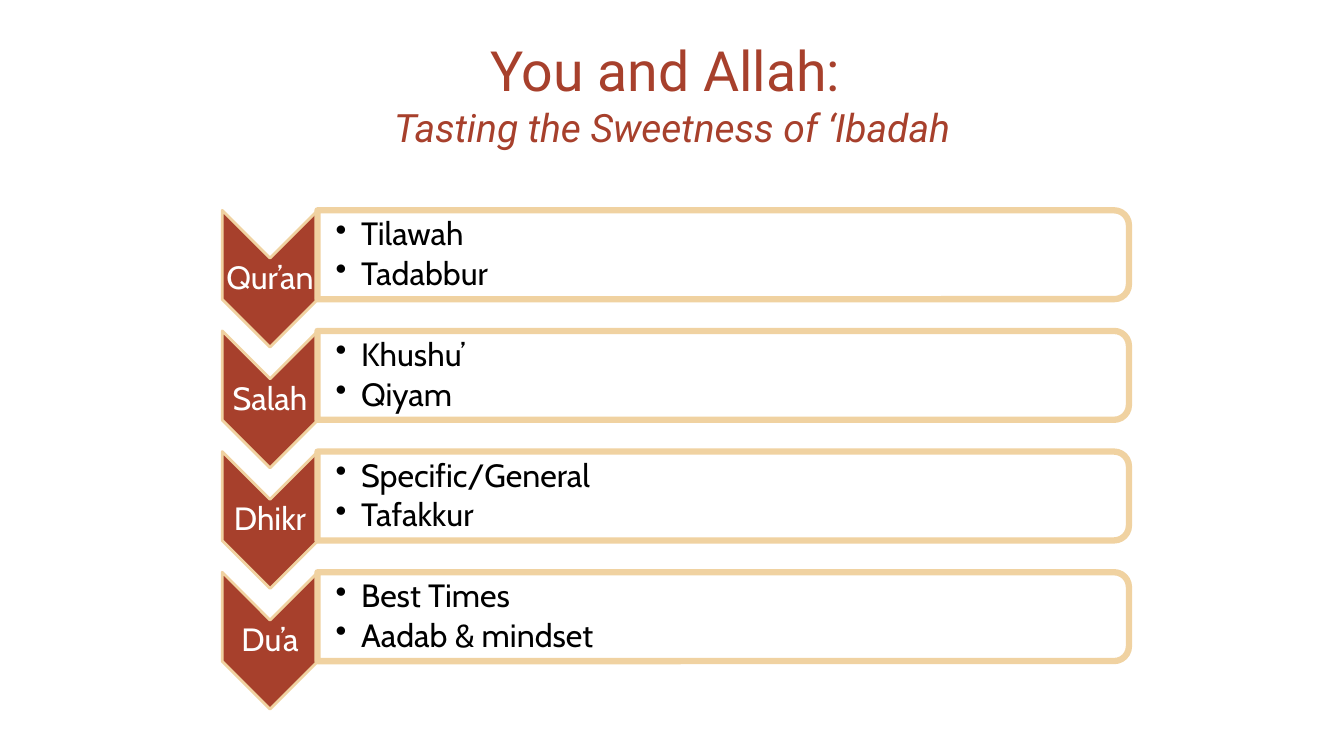
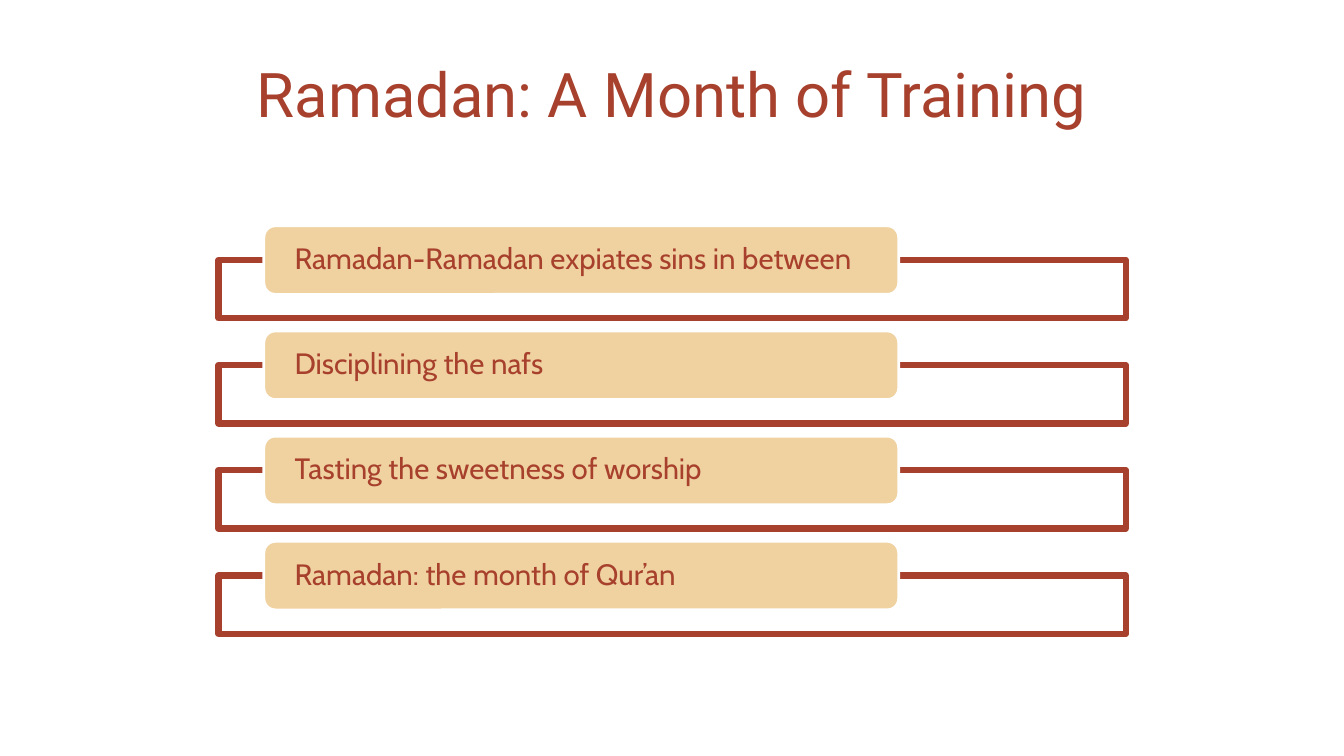
import pptx
import pptx.dml.color
import pptx.enum.shapes
import pptx.enum.text
import pptx.oxml.ns
import pptx.util
from pptx.util import Cm

SHAPE = pptx.enum.shapes.MSO_SHAPE
ALIGN = pptx.enum.text.PP_ALIGN
COLORS = {"rust": "A7402C", "sand": "F0D2A1", "white": "FFFFFF", "black": "000000"}


def color(name):
    return pptx.dml.color.RGBColor.from_string(COLORS[name])


class Slides:
    """Holds the shared style and the slide being built."""

    heading = {"name": "Roboto", "size": 44, "color": "rust"}
    body = {"name": "Cabin", "size": 23, "color": "black"}

    def __init__(self):
        self.deck = pptx.Presentation()
        self.deck.slide_width, self.deck.slide_height = Cm(33.87), Cm(19.05)
        self.page = None

    def add_page(self):
        self.page = self.deck.slides.add_slide(self.deck.slide_layouts[6])

    def set_font(self, font, style):
        for key, value in style.items():
            if key == "color":
                font.color.rgb = color(value)
            else:
                setattr(font, key, pptx.util.Pt(value) if key == "size" else value)

    def frame(self, box, inset=(0, 0, 0, 0)):
        frame = box.text_frame
        sides = ("margin_left", "margin_top", "margin_right", "margin_bottom")
        for side, length in zip(sides, inset):
            setattr(frame, side, Cm(length))
        frame.word_wrap = True
        frame.vertical_anchor = pptx.enum.text.MSO_ANCHOR.MIDDLE
        return frame

    def text_box(self, left, top, width, height, inset=(0, 0, 0, 0)):
        box = self.page.shapes.add_textbox(Cm(left), Cm(top), Cm(width), Cm(height))
        return self.frame(box, inset)

    def add_text(self, para, text, style, align=ALIGN.LEFT, spacing=0.9):
        para.alignment, para.line_spacing = align, spacing
        span = para.add_run()
        span.text = text
        self.set_font(span.font, style)

    def title(self, text, subtitle=None, size=44):
        para = self.text_box(1.7, 0.76, 30.48, 3.18).paragraphs[0]
        self.add_text(para, text, {**self.heading, "size": size}, ALIGN.CENTER, 1.0)
        if subtitle:
            para.add_line_break()
            style = {**self.heading, "size": 27.9, "italic": True}
            self.add_text(para, subtitle, style, ALIGN.CENTER, 1.0)

    def shape(self, kind, left, top, width, height, fill, line, weight, turned=False):
        """Places a shape by its visible bounds, turned a quarter if asked."""
        if turned:
            left, top = left + (width - height) / 2, top + (height - width) / 2
            width, height = height, width
        shape = self.page.shapes.add_shape(kind, Cm(left), Cm(top), Cm(width), Cm(height))
        shape.rotation = 90 if turned else 0
        shape.shadow.inherit = False
        shape.fill.solid()
        shape.fill.fore_color.rgb = color(fill)
        shape.line.color.rgb = color(line)
        shape.line.width = pptx.util.Pt(weight)
        return shape

    def bullet(self, para, text):
        para.space_after = pptx.util.Pt(3.5)
        properties = para._p.get_or_add_pPr()
        properties.set("marL", str(Cm(0.64)))
        properties.set("indent", str(-Cm(0.64)))
        mark = properties.makeelement(pptx.oxml.ns.qn("a:buChar"), {"char": "•"})
        properties.append(mark)
        self.add_text(para, text, self.body)

    def chevron_row(self, top, label, bullets):
        self.shape(SHAPE.CHEVRON, 5.6, top, 2.41, 3.45, "rust", "sand", 2, turned=True)
        frame = self.text_box(5.6, top + 1.21, 2.41, 1.04, (0.05,) * 4)
        self.add_text(frame.paragraphs[0], label, {**self.body, "color": "white"}, ALIGN.CENTER)
        self.shape(SHAPE.ROUND_2_SAME_RECTANGLE, 8, top, 20.45, 2.24,
                   "white", "sand", 4.5, turned=True)
        frame = self.text_box(8, top + 0.12, 20.35, 2.03, (0.46, 0.05, 0.05, 0.05))
        for index, text in enumerate(bullets):
            self.bullet(frame.add_paragraph() if index else frame.paragraphs[0], text)

    def tab_row(self, top, text):
        self.shape(SHAPE.RECTANGLE, 5.51, top + 0.86, 22.86, 1.47, "white", "rust", 4.5)
        tab = self.shape(SHAPE.ROUNDED_RECTANGLE, 6.65, top, 16, 1.73, "sand", "white", 2)
        frame = self.frame(tab, (0.69, 0, 0.69, 0))
        self.add_text(frame.paragraphs[0], text, {**self.body, "size": 21, "color": "rust"})


def main():
    slides = Slides()

    # Acts of worship
    slides.add_page()
    slides.title("You and Allah: ", "Tasting the Sweetness of ‘Ibadah", 39.6)
    acts = {
        "Qur’an": ("Tilawah", "Tadabbur"),
        "Salah": ("Khushu’", "Qiyam"),
        "Dhikr": ("Specific/General", "Tafakkur"),
        "Du’a": ("Best Times", "Aadab & mindset"),
    }
    for row, (label, bullets) in enumerate(acts.items()):
        slides.chevron_row(5.3 + 3.04 * row, label, bullets)

    # Month of training
    slides.add_page()
    slides.title("Ramadan: A Month of Training")
    lessons = (
        "Ramadan-Ramadan expiates sins in between",
        "Disciplining the nafs",
        "Tasting the sweetness of worship",
        "Ramadan: the month of Qur’an",
    )
    for row, lesson in enumerate(lessons):
        slides.tab_row(5.69 + 2.65 * row, lesson)

    slides.deck.save("out.pptx")


if __name__ == "__main__":
    main()
